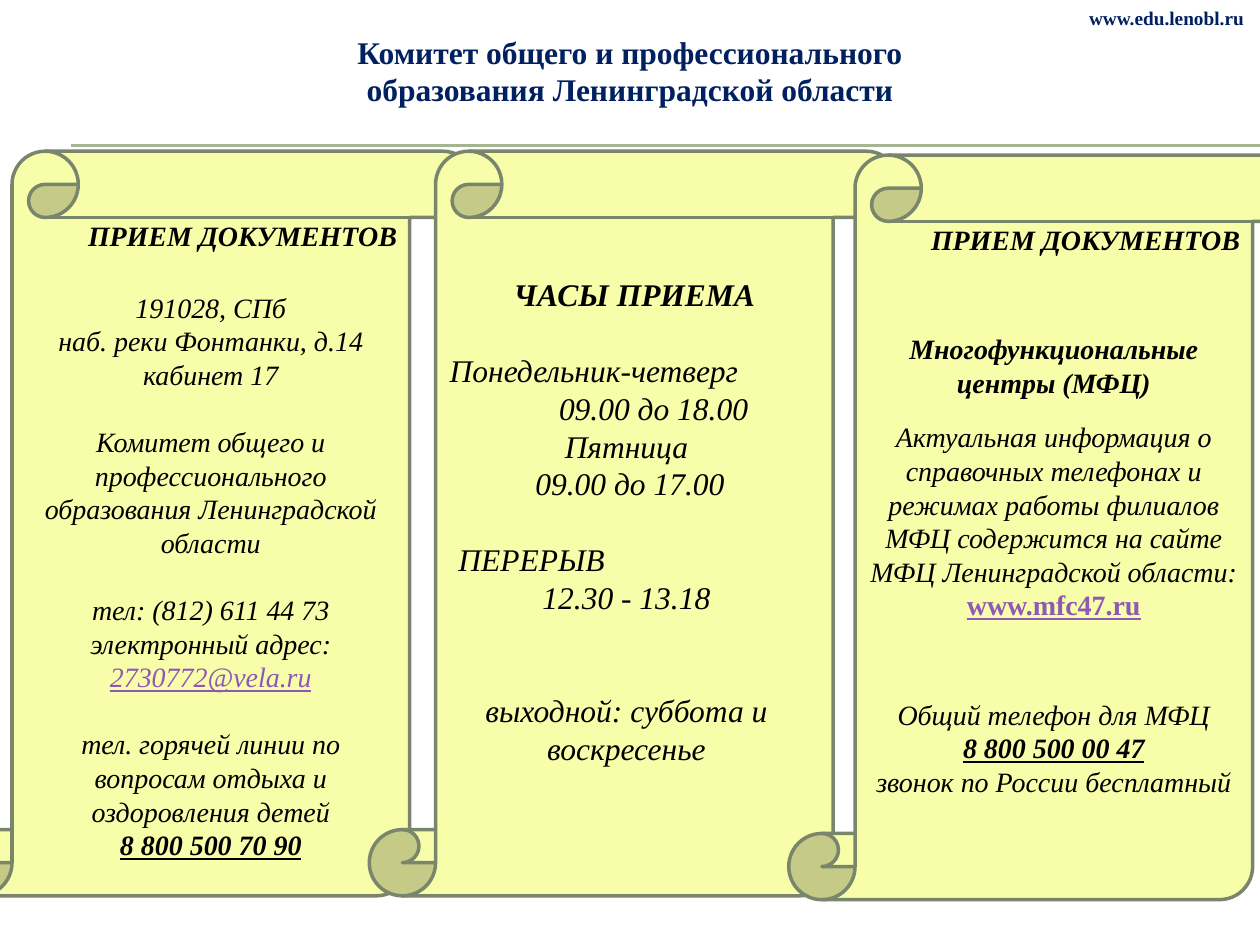
from dataclasses import dataclass

from lxml.etree import SubElement
from pptx import Presentation
from pptx.dml.color import RGBColor as Rgb
from pptx.enum.shapes import MSO_CONNECTOR as Conn, MSO_SHAPE as Kind
from pptx.enum.text import MSO_ANCHOR as Anchor, MSO_AUTO_SIZE as Fit, PP_ALIGN as Align
from pptx.oxml.ns import qn
from pptx.util import Pt


@dataclass(frozen=True)
class Theme:
    font: str = "Times New Roman"
    navy: str = "002060"
    ink: str = "000000"
    link: str = "8E58B6"
    paper: str = "F7FDA9"
    edge: str = "7A866C"
    rule: str = "A5B592"
    big: float = 18
    body: float = 16
    small: float = 11
    gap: float = 1.2  # line height in ems


@dataclass(frozen=True)
class Span:
    text: str
    bold: bool = False
    under: bool = False
    slant: bool = True
    color: str = Theme.ink


@dataclass(frozen=True)
class Para:
    spans: tuple[Span, ...]
    size: float = Theme.body
    before: float = 0
    align: Align = Align.CENTER
    left: float = 0
    right: float = 0


@dataclass(frozen=True)
class Scroll:
    left: float
    top: float
    paras: tuple[Para, ...]
    foot: float = 3.6  # bottom inset


T = Theme()
BIG_GAP = T.big * T.gap
GAP = T.body * T.gap


def line(text: str, bold: bool = False, under: bool = False, **kind) -> Para:
    return Para((Span(text, bold, under),), **kind)


def style(run, span: Span, size: float) -> None:
    font = run.font
    font.name, font.size = T.font, Pt(size)
    font.bold, font.italic, font.underline = span.bold, span.slant, span.under
    font.color.rgb = Rgb.from_string(span.color)


def fill_para(para, data: Para) -> None:
    para.alignment = data.align
    para.space_before = Pt(data.before)
    props = para._p.get_or_add_pPr()
    for name, size in (("marL", data.left), ("marR", data.right)):
        if size:
            props.set(name, str(int(Pt(size))))
    for span in data.spans:
        run = para.add_run()
        run.text = span.text
        style(run, span, data.size)


def draw_scroll(slide, data: Scroll) -> None:
    shape = slide.shapes.add_shape(
        Kind.VERTICAL_SCROLL, Pt(data.left), Pt(data.top), Pt(303), Pt(425.5))
    shape.shadow.inherit = False
    shape.fill.solid()
    shape.fill.fore_color.rgb = Rgb.from_string(T.paper)
    shape.line.color.rgb = Rgb.from_string(T.edge)
    shape.line.width = Pt(2)
    frame = shape.text_frame
    frame.word_wrap = True
    frame.vertical_anchor = Anchor.MIDDLE
    frame.margin_bottom = Pt(data.foot)
    for i, para in enumerate(data.paras):
        fill_para(frame.add_paragraph() if i else frame.paragraphs[0], para)


def draw_rule(slide, y: float) -> None:
    rule = slide.shapes.add_connector(Conn.STRAIGHT, Pt(40.5), Pt(y), Pt(720), Pt(y))
    rule.line.color.rgb = Rgb.from_string(T.rule)
    rule.line.width = Pt(0.75)
    SubElement(rule._element.spPr, qn("a:effectLst"))


def set_head(shape, text: str, size: float, align: Align, wrap: bool) -> None:
    frame = shape.text_frame
    frame.text = text
    frame.word_wrap = wrap
    frame.auto_size = Fit.NONE
    frame.vertical_anchor = Anchor.TOP
    para = frame.paragraphs[0]
    para.alignment = align
    para.space_before = Pt(0)
    style(para.runs[0], Span(text, bold=True, slant=False, color=T.navy), size)


SCROLLS = (
    # Where to hand in papers
    Scroll(-31, 86.4, (
        line("ПРИЕМ ДОКУМЕНТОВ", True, align=Align.RIGHT),
        line("191028, СПб", before=BIG_GAP),
        line("наб. реки Фонтанки, д.14 кабинет 17"),
        line("Комитет общего и профессионального образования Ленинградской области",
             before=GAP),
        line("тел: (812) 611 44 73", before=GAP),
        Para((Span("электронный адрес: "),
              Span("2730772@vela.ru", under=True, color=T.link))),
        line("тел. горячей линии по вопросам отдыха и оздоровления детей", before=GAP),
        line("8 800 500 70 90", True, True),
    )),
    # Opening hours
    Scroll(211, 86.4, (
        line("ЧАСЫ ПРИЕМА", True, size=T.big),
        line("Понедельник-четверг", size=T.big, before=BIG_GAP, align=Align.LEFT, left=1),
        line("09.00 до 18.00", size=T.big, left=22),
        line("Пятница", size=T.big, right=9),
        line("09.00 до 17.00", size=T.big, left=4),
        line("ПЕРЕРЫВ", size=T.big, before=BIG_GAP, align=Align.LEFT, left=6),
        line("12.30 - 13.18", size=T.big),
        line("выходной: суббота и воскресенье", size=T.big, before=2 * BIG_GAP),
    ), foot=3.6 + BIG_GAP),
    # Service centres
    Scroll(450.7, 88.6, (
        line("ПРИЕМ ДОКУМЕНТОВ", True, align=Align.RIGHT),
        line("Многофункциональные центры (МФЦ)", True, before=2 * BIG_GAP),
        Para((Span("Актуальная информация о справочных телефонах и режимах работы "
                   "филиалов МФЦ содержится на сайте МФЦ Ленинградской области: "),
              Span("www.mfc47.ru", True, True, False, T.link)), before=12),
        line("Общий телефон для МФЦ", before=24 + GAP),
        line("8 800 500 00 47", True, True),
        line("звонок по России бесплатный"),
    ), foot=3.6 + 2 * GAP),
)


def main() -> None:
    deck = Presentation()
    deck.slide_width, deck.slide_height = Pt(720), Pt(540)
    slide = deck.slides.add_slide(deck.slide_layouts[5])

    # Heading and site address
    title = slide.shapes.title
    title.left, title.top, title.width, title.height = Pt(180), Pt(15), Pt(360), Pt(51)
    set_head(title, "Комитет общего и профессионального образования Ленинградской области",
             T.big, Align.CENTER, True)
    site = slide.shapes.add_textbox(Pt(613.5), Pt(0), Pt(104.5), Pt(21))
    set_head(site, "www.edu.lenobl.ru", T.small, Align.RIGHT, False)

    # Double rule under the heading
    for y in (82.8, 83.5):
        draw_rule(slide, y)

    # Three scrolls, each over the one before
    for scroll in SCROLLS:
        draw_scroll(slide, scroll)

    deck.save("out.pptx")


if __name__ == "__main__":
    main()
